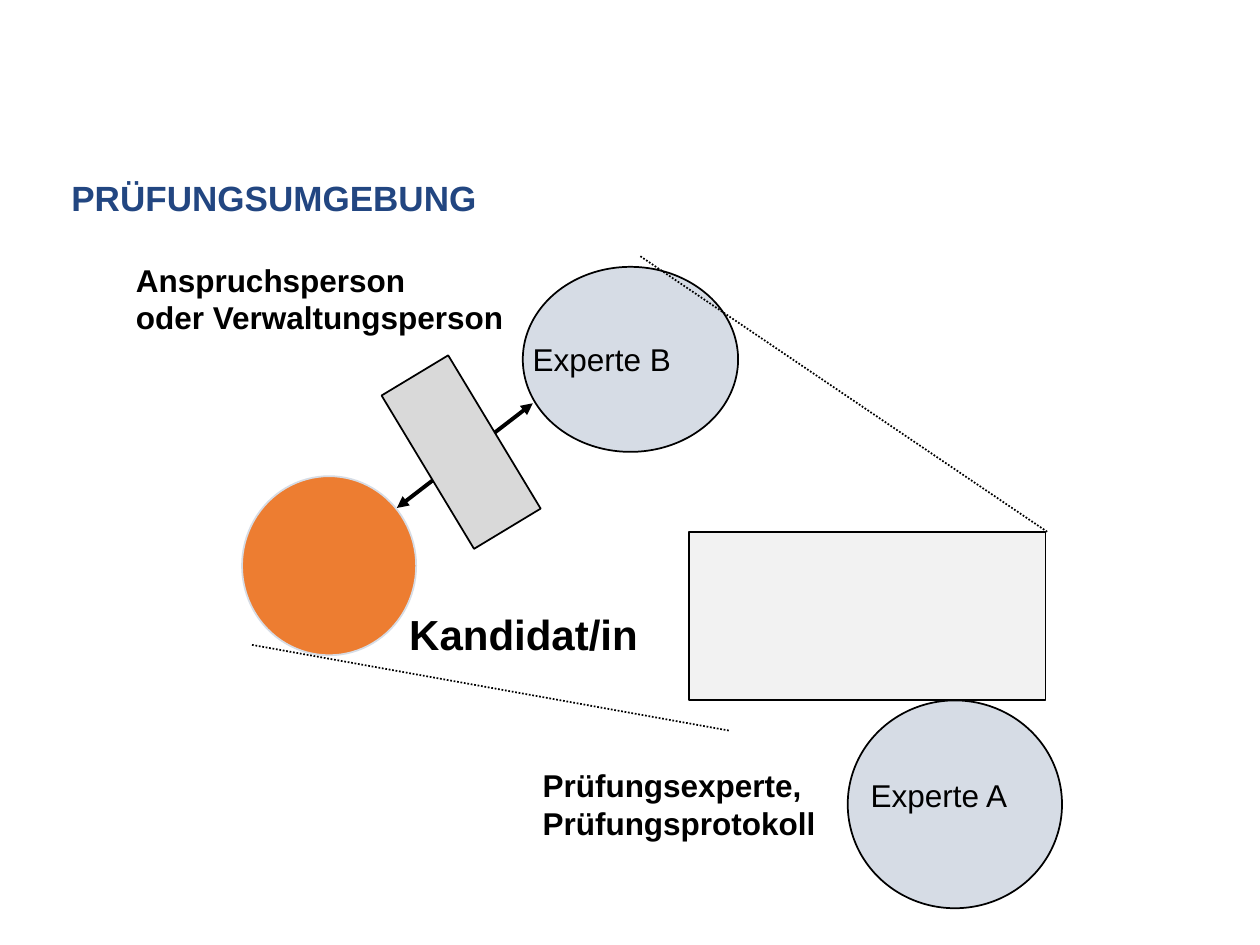
from dataclasses import dataclass

from lxml.etree import SubElement
from pptx import Presentation
from pptx.dml.color import RGBColor
from pptx.enum.dml import MSO_LINE
from pptx.enum.shapes import MSO_CONNECTOR, MSO_SHAPE
from pptx.enum.text import MSO_AUTO_SIZE
from pptx.oxml.ns import qn
from pptx.util import Cm, Pt


@dataclass(frozen=True)
class Theme:
    font: str = "Arial"
    title: str = "224681"
    ink: str = "000000"
    expert: str = "D6DCE5"
    candidate: str = "ED7D31"
    desk: str = "F2F2F2"
    small_table: str = "D9D9D9"
    title_size: float = 20
    candidate_size: float = 24
    label_size: float = 18
    thin: float = 1
    thick: float = 2.25


THEME = Theme()


def color(value):
    return RGBColor.from_string(value)


def add_figure(page, preset, place, fill, line=THEME.ink, rotation=0):
    figure = page.shapes.add_shape(preset, *map(Cm, place))
    figure.shadow.inherit = False
    figure.fill.solid()
    figure.fill.fore_color.rgb = color(fill)
    figure.line.color.rgb = color(line)
    figure.line.width = Pt(THEME.thin)
    figure.rotation = rotation


def add_text(page, place, lines, size=THEME.label_size, bold=True,
             ink=THEME.ink, wrap=True, spacing=None, grow=True):
    """Add a text box with one paragraph per line."""
    frame = page.shapes.add_textbox(*map(Cm, place)).text_frame
    frame.word_wrap = wrap
    frame.auto_size = MSO_AUTO_SIZE.SHAPE_TO_FIT_TEXT if grow else MSO_AUTO_SIZE.NONE
    frame.text = "\n".join(lines)
    for para in frame.paragraphs:
        para.line_spacing = spacing
        para.font.name = THEME.font
        para.font.size = Pt(size)
        para.font.bold = bold
        para.font.color.rgb = color(ink)


def add_line(page, start, end, width=THEME.thin, dash=None, arrows=False):
    """Add a straight line, with arrowheads at both ends if wanted."""
    connector = page.shapes.add_connector(
        MSO_CONNECTOR.STRAIGHT, *map(Cm, start + end))
    connector.line.color.rgb = color(THEME.ink)
    connector.line.width = Pt(width)
    if dash:
        connector.line.dash_style = dash
    properties = connector.element.spPr
    if arrows:
        outline = properties.find(qn("a:ln"))
        for tag in ("a:headEnd", "a:tailEnd"):
            SubElement(outline, qn(tag), type="triangle")
    SubElement(properties, qn("a:effectLst"))


def main():
    deck = Presentation()
    deck.slide_width, deck.slide_height = Cm(25.4), Cm(19.05)
    page = deck.slides.add_slide(deck.slide_layouts[6])

    add_text(page, (1.19, 3.53, 19.41, 2.39), ["PRÜFUNGSUMGEBUNG"],
             THEME.title_size, ink=THEME.title, spacing=0.9, grow=False)

    # Seats and the examination desk
    add_figure(page, MSO_SHAPE.OVAL, (10.54, 5.38, 4.34, 3.73), THEME.expert)
    add_figure(page, MSO_SHAPE.OVAL, (4.88, 9.6, 3.51, 3.61),
               THEME.candidate, line=THEME.expert)
    add_figure(page, MSO_SHAPE.RECTANGLE, (13.89, 10.72, 7.19, 3.4), THEME.desk)
    add_figure(page, MSO_SHAPE.OVAL, (17.09, 14.12, 4.32, 4.19), THEME.expert)

    # Conversation across the small table
    add_line(page, (8, 10.24), (10.74, 8.13), THEME.thick, arrows=True)
    add_text(page, (8, 12.14, 5.49, 1.27), ["Kandidat/in"], THEME.candidate_size)
    add_text(page, (2.49, 5.13, 8, 1.8),
             ["Anspruchsperson", "oder Verwaltungsperson"], wrap=False)

    # Field of view
    for start, end in (((5.08, 13), (14.71, 14.73)),
                       ((21.11, 10.72), (12.9, 5.16))):
        add_line(page, start, end, dash=MSO_LINE.ROUND_DOT)

    add_text(page, (10.69, 15.32, 6.07, 1.8),
             ["Prüfungsexperte,", "Prüfungsprotokoll"], wrap=False)
    add_figure(page, MSO_SHAPE.RECTANGLE, (7.49, 8.33, 3.61, 1.57),
               THEME.small_table, rotation=58.9)
    add_text(page, (17.3, 15.52, 4.39, 1.02), ["Experte A"], bold=False)
    add_text(page, (10.49, 6.73, 4.6, 1.02), ["Experte B"], bold=False)

    deck.save("out.pptx")


if __name__ == "__main__":
    main()
